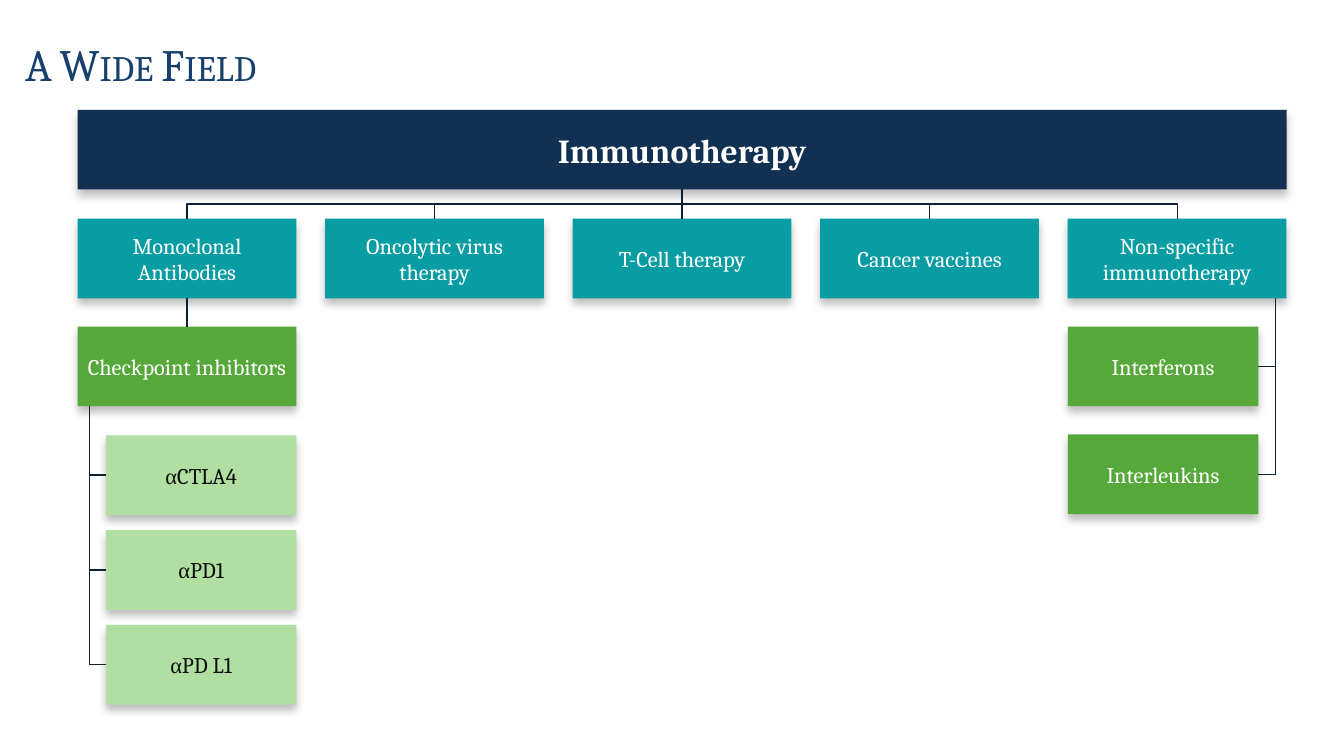
import dataclasses
import typing

import pptx
import pptx.dml.color
import pptx.enum.shapes
import pptx.enum.text
import pptx.oxml
import pptx.oxml.ns
import pptx.oxml.xmlchemy
import pptx.util

Inches = pptx.util.Inches
Color = pptx.dml.color.RGBColor
Anchor = pptx.enum.text.MSO_ANCHOR
Align = pptx.enum.text.PP_ALIGN
Connector = pptx.enum.shapes.MSO_CONNECTOR

TITLE_BLUE = Color(0x17, 0x40, 0x6D)
NAVY = Color(0x11, 0x30, 0x52)
TEAL = Color(0x08, 0x9C, 0xA3)
GREEN = Color(0x55, 0xA8, 0x39)
PALE_GREEN = Color(0xB0, 0xDF, 0xA1)
LINE_NAVY = Color(0x0C, 0x20, 0x36)
WHITE = Color(0xFF, 0xFF, 0xFF)
INK = Color(0x0D, 0x0D, 0x0D)

BOX_HEIGHT = 0.79
WIDE, NARROW = 2.17, 1.89
LEFT, BANNER_WIDTH = 0.77, 11.99
BANNER_TOP, THERAPY_TOP, CLASS_TOP = 1.09, 2.17, 3.24
BUS_Y = 2.02

SHADOW = (
    f'<a:outerShdw {pptx.oxml.ns.nsdecls("a")} blurRad="76200" dist="50800" '
    'dir="5400000" algn="t" rotWithShape="0"><a:srgbClr val="000000">'
    '<a:alpha val="25000"/></a:srgbClr></a:outerShdw>'
)


@dataclasses.dataclass
class Node:
    text: str
    left: float
    top: float
    width: float
    fill: Color
    ink: Color = WHITE
    size: int = 16
    bold: bool = False

    @property
    def middle(self) -> float:
        return self.left + self.width / 2

    @property
    def center_y(self) -> float:
        return self.top + BOX_HEIGHT / 2

    @property
    def bottom(self) -> float:
        return self.top + BOX_HEIGHT


def add_text(para: typing.Any, text: str, *, size: int, color: Color,
             font: str = "Cambria", bold: bool = False,
             small_caps: bool = False) -> None:
    span = para.add_run()
    span.text = text
    span.font.name = font
    span.font.size = pptx.util.Pt(size)
    span.font.color.rgb = color
    span.font.bold = bold
    if small_caps:
        span.font._element.set("cap", "small")


def draw_title(page: typing.Any, text: str) -> None:
    box = page.shapes.add_textbox(Inches(0.15), Inches(0.21), Inches(11.5), Inches(0.74))
    box.text_frame.word_wrap = True
    box.text_frame.vertical_anchor = Anchor.BOTTOM
    add_text(box.text_frame.paragraphs[0], text, size=32, color=TITLE_BLUE, small_caps=True)


def draw_node(page: typing.Any, node: Node) -> typing.Any:
    box = page.shapes.add_shape(
        pptx.enum.shapes.MSO_SHAPE.RECTANGLE, Inches(node.left), Inches(node.top),
        Inches(node.width), Inches(BOX_HEIGHT))
    box.fill.solid()
    box.fill.fore_color.rgb = node.fill
    box.line.fill.background()
    box.shadow.inherit = False
    effects = box._element.spPr.find(pptx.oxml.ns.qn("a:effectLst"))
    effects.append(pptx.oxml.parse_xml(SHADOW))

    frame = box.text_frame
    frame.word_wrap = True
    frame.vertical_anchor = Anchor.MIDDLE
    frame.margin_left = frame.margin_right = Inches(0.05)
    para = frame.paragraphs[0]
    para.alignment = Align.CENTER
    name = node.text.removeprefix("α")
    if name != node.text:
        add_text(para, "α", size=node.size, color=node.ink, font="Times New Roman")
    add_text(para, name, size=node.size, color=node.ink, bold=node.bold)
    return box


def draw_line(page: typing.Any, kind: typing.Any, x1: float, y1: float,
              x2: float, y2: float) -> typing.Any:
    line = page.shapes.add_connector(kind, Inches(x1), Inches(y1), Inches(x2), Inches(y2))
    line.line.color.rgb = LINE_NAVY
    line.line.width = pptx.util.Pt(1)
    line._element.spPr.append(pptx.oxml.xmlchemy.OxmlElement("a:effectLst"))
    return line


def draw_elbow(page: typing.Any, x1: float, y1: float, x2: float, y2: float,
               geometry: str) -> None:
    """Draw an elbow that leaves downward, as a quarter turn of a sideways one."""
    middle_x, middle_y = (x1 + x2) / 2, (y1 + y2) / 2
    half_width, half_height = (y2 - y1) / 2, abs(x2 - x1) / 2
    rightward = x2 > x1
    reach = -half_width if rightward else half_width
    line = draw_line(page, Connector.ELBOW, middle_x - reach, middle_y - half_height,
                     middle_x + reach, middle_y + half_height)
    properties = line._element.spPr
    turn = 270 if rightward else 90
    properties.find(pptx.oxml.ns.qn("a:xfrm")).set("rot", str(turn * 60000))
    properties.find(pptx.oxml.ns.qn("a:prstGeom")).set("prst", geometry)


def draw_branch(page: typing.Any, x: float, start_y: float,
                ends: list[tuple[float, float]]) -> None:
    for end_x, end_y in ends:
        draw_elbow(page, x, start_y, end_x, end_y, "bentConnector2")
        start_y = end_y


def main() -> None:
    deck = pptx.Presentation()
    deck.slide_width, deck.slide_height = Inches(13.33), Inches(7.5)
    page = deck.slides.add_slide(deck.slide_layouts[6])
    draw_title(page, "A Wide Field")

    # Chart nodes
    banner = Node("Immunotherapy", LEFT, BANNER_TOP, BANNER_WIDTH, NAVY, size=24, bold=True)
    names = ["Monoclonal Antibodies", "Oncolytic virus therapy", "T-Cell therapy",
             "Cancer vaccines", "Non-specific immunotherapy"]
    pitch = (BANNER_WIDTH - WIDE) / (len(names) - 1)
    therapies = [Node(name, LEFT + i * pitch, THERAPY_TOP, WIDE, TEAL)
                 for i, name in enumerate(names)]
    checkpoint = Node("Checkpoint inhibitors", LEFT, CLASS_TOP, WIDE, GREEN)
    proteins = [Node(name, therapies[-1].left, CLASS_TOP + i * 1.07, NARROW, GREEN)
                for i, name in enumerate(["Interferons", "Interleukins"])]
    inhibitors = [Node(name, 1.05, 4.32 + i * 0.94, NARROW, PALE_GREEN, INK)
                  for i, name in enumerate(["αCTLA4", "αPD1", "αPD L1"])]

    draw_node(page, banner)
    therapy_boxes = [draw_node(page, node) for node in therapies]
    checkpoint_box = draw_node(page, checkpoint)
    for node in proteins + inhibitors:
        draw_node(page, node)

    # Banner to the therapies
    for node in (therapies[0], therapies[-1]):
        draw_elbow(page, banner.middle, banner.bottom, node.middle, node.top, "bentConnector3")
    for node, box in list(zip(therapies, therapy_boxes))[1:-1]:
        drop = draw_line(page, Connector.STRAIGHT, node.middle, BUS_Y, node.middle, node.top)
        drop.end_connect(box, 0)

    # Therapies to their classes and agents
    stem = draw_line(page, Connector.STRAIGHT, checkpoint.middle, therapies[0].bottom,
                     checkpoint.middle, checkpoint.top)
    stem.begin_connect(therapy_boxes[0], 2)
    stem.end_connect(checkpoint_box, 0)
    draw_branch(page, 0.89, checkpoint.bottom,
                [(node.left, node.center_y) for node in inhibitors])
    draw_branch(page, 12.65, therapies[-1].bottom,
                [(node.left + node.width, node.center_y) for node in proteins])

    deck.save("out.pptx")


if __name__ == "__main__":
    main()
